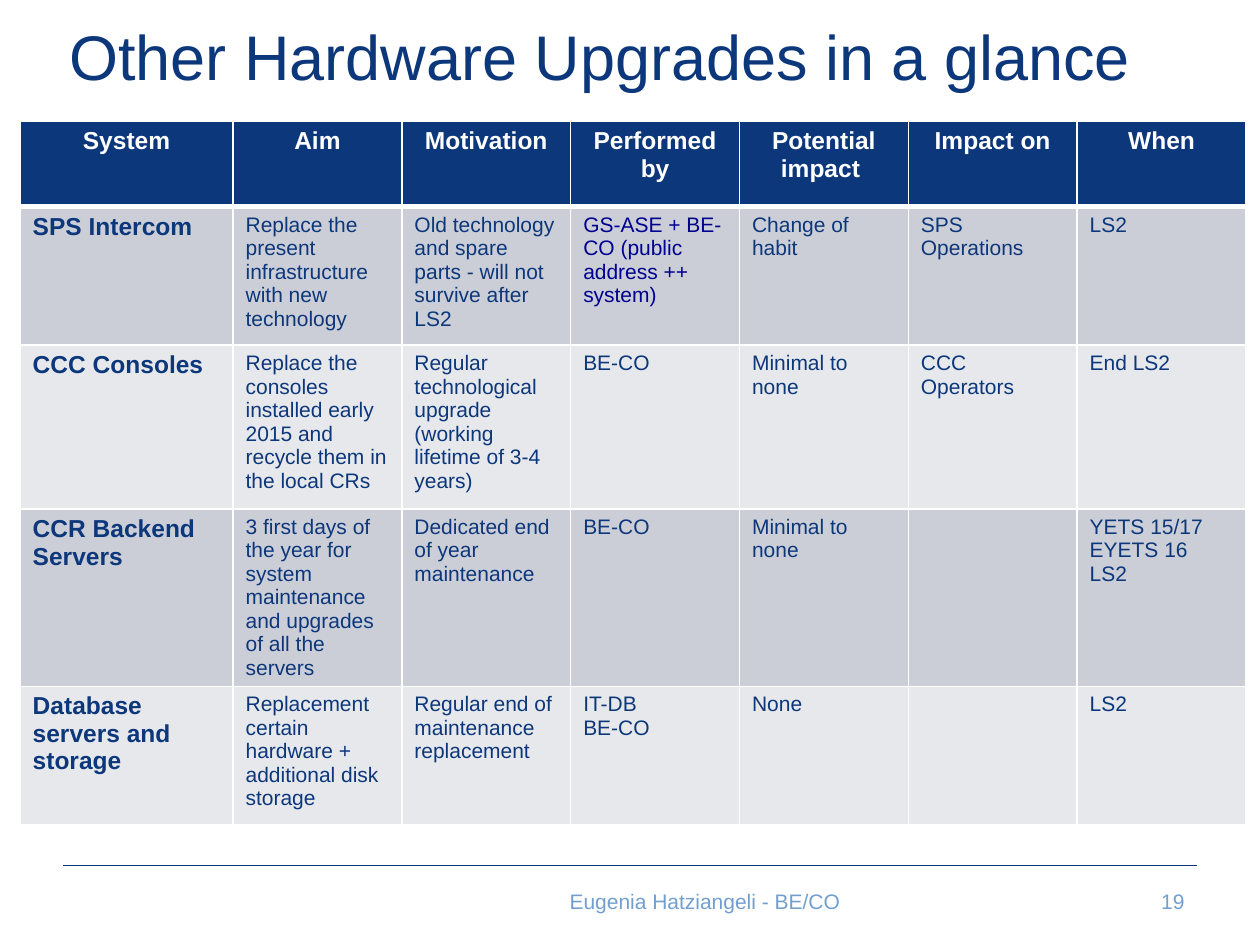
from dataclasses import dataclass

from lxml import etree
from pptx import Presentation
from pptx.dml.color import RGBColor
from pptx.enum.shapes import MSO_CONNECTOR
from pptx.enum.text import MSO_ANCHOR, MSO_AUTO_SIZE, PP_ALIGN
from pptx.oxml.ns import qn
from pptx.util import Inches, Pt

LEFT, CENTER, RIGHT = PP_ALIGN.LEFT, PP_ALIGN.CENTER, PP_ALIGN.RIGHT
MIDDLE = MSO_ANCHOR.MIDDLE
NO_AUTOFIT = MSO_AUTO_SIZE.NONE
STRAIGHT = MSO_CONNECTOR.STRAIGHT
TITLE_ONLY = 5


@dataclass(frozen=True)
class Theme:
    font: str = "Arial"
    navy: str = "0C377B"
    accent: str = "000090"
    footer: str = "729FCF"
    white: str = "FFFFFF"
    bands: tuple = ("CCCED7", "E7E8EC")
    title_size: int = 36
    heading_size: int = 14
    body_size: int = 12
    grid_width: int = 1
    header_rule_width: int = 3


THEME = Theme()

HEADINGS = ["System", "Aim", "Motivation", "Performed by",
            "Potential impact ", "Impact on", "When"]
UPGRADES = [
    ["SPS Intercom", "Replace the present infrastructure with new technology",
     "Old technology and spare parts - will not survive after LS2",
     "GS-ASE + BE-CO (public address ++ system)", "Change of habit",
     "SPS Operations", "LS2"],
    ["CCC Consoles",
     "Replace the consoles installed early 2015 and recycle them in the local CRs",
     "Regular technological upgrade (working lifetime of 3-4 years)",
     "BE-CO", "Minimal to none", "CCC Operators", "End LS2"],
    ["CCR Backend Servers",
     "3 first days of the year for system maintenance and upgrades of all the servers",
     "Dedicated end of year maintenance", "BE-CO", "Minimal to none", "",
     "YETS 15/17 EYETS 16\nLS2"],
    ["Database servers and storage",
     "Replacement certain hardware + additional disk storage",
     "Regular end of maintenance replacement", "IT-DB\nBE-CO", "None", "", "LS2"],
]
ACCENTED_CELL = (1, 3)
SYSTEM_WIDTH, DETAIL_WIDTH = 1.69, 1.34
ROW_HEIGHTS = [0.68, 1.1, 1.3, 1.3, 1.1]


def write(frame, text, size, color, align=LEFT, bold=False):
    frame.text = text
    for paragraph in frame.paragraphs:
        paragraph.alignment = align
        for run in paragraph.runs:
            run.font.name = THEME.font
            run.font.size = Pt(size)
            run.font.bold = bold
            run.font.color.rgb = RGBColor.from_string(color)


def add_title(slide, left, top, width, height):
    title = slide.shapes.title
    title.left, title.top = Inches(left), Inches(top)
    title.width, title.height = Inches(width), Inches(height)
    frame = title.text_frame
    frame.auto_size = NO_AUTOFIT
    frame.vertical_anchor = MIDDLE
    frame.margin_left = frame.margin_right = Inches(0.05)
    frame.margin_top = frame.margin_bottom = Inches(0.05)
    write(frame, "Other Hardware Upgrades in a glance", THEME.title_size, THEME.navy)


def set_borders(cell, top_width, bottom_width):
    grid = THEME.grid_width
    widths = {"a:lnL": grid, "a:lnR": grid, "a:lnT": top_width, "a:lnB": bottom_width}
    properties = cell._tc.get_or_add_tcPr()
    # Border lines must come before the cell fill
    for position, (side, width) in enumerate(widths.items()):
        border = etree.Element(qn(side), w=str(Pt(width)))
        fill = etree.SubElement(border, qn("a:solidFill"))
        etree.SubElement(fill, qn("a:srgbClr"), val=THEME.white)
        properties.insert(position, border)


def add_upgrades_table(slide, left, top, width, height):
    frame = slide.shapes.add_table(len(UPGRADES) + 1, len(HEADINGS), Inches(left),
                                   Inches(top), Inches(width), Inches(height))
    table = frame.table
    for index, column in enumerate(table.columns):
        column.width = Inches(DETAIL_WIDTH if index else SYSTEM_WIDTH)
    for row, row_height in zip(table.rows, ROW_HEIGHTS):
        row.height = Inches(row_height)

    for r, entries in enumerate([HEADINGS] + UPGRADES):
        is_header = r == 0
        background = THEME.navy if is_header else THEME.bands[(r - 1) % 2]
        for c, entry in enumerate(entries):
            cell = table.cell(r, c)
            cell.fill.solid()
            cell.fill.fore_color.rgb = RGBColor.from_string(background)
            set_borders(cell,
                        THEME.header_rule_width if r == 1 else THEME.grid_width,
                        THEME.header_rule_width if is_header else THEME.grid_width)
            is_heading = is_header or c == 0
            color = THEME.white if is_header else THEME.navy
            if (r, c) == ACCENTED_CELL:
                color = THEME.accent
            write(cell.text_frame, entry,
                  THEME.heading_size if is_heading else THEME.body_size,
                  color, CENTER if is_header else LEFT, is_heading)


def add_footer(slide, left, top, width, height):
    # Rule across the footer
    rule = slide.shapes.add_connector(STRAIGHT, Inches(left), Inches(top),
                                      Inches(left + width), Inches(top))
    rule.line.color.rgb = RGBColor.from_string(THEME.navy)
    rule.line.width = Pt(0.5)
    etree.SubElement(rule._element.spPr, qn("a:effectLst"))

    # Author and page number, flush with the right end of the rule
    number_width, author_width, text_height = 0.8, 6.21, 0.4
    number_left = left + width - number_width
    text_top = top + height - text_height
    for text, text_left, text_width, align in (
            ("Eugenia Hatziangeli - BE/CO", number_left - author_width, author_width, CENTER),
            ("19", number_left, number_width, RIGHT)):
        label = slide.shapes.add_textbox(Inches(text_left), Inches(text_top),
                                         Inches(text_width), Inches(text_height))
        label.text_frame.word_wrap = True
        label.text_frame.vertical_anchor = MIDDLE
        write(label.text_frame, text, THEME.body_size, THEME.footer, align)


def main():
    presentation = Presentation()
    presentation.slide_width, presentation.slide_height = Inches(10), Inches(7.5)
    slide = presentation.slides.add_slide(presentation.slide_layouts[TITLE_ONLY])
    add_title(slide, 0.5, 0.05, 9, 0.78)
    add_upgrades_table(slide, 0.16, 0.96, SYSTEM_WIDTH + 6 * DETAIL_WIDTH, sum(ROW_HEIGHTS))
    add_footer(slide, 0.5, 6.87, 9, 0.48)
    presentation.save("out.pptx")


if __name__ == "__main__":
    main()
